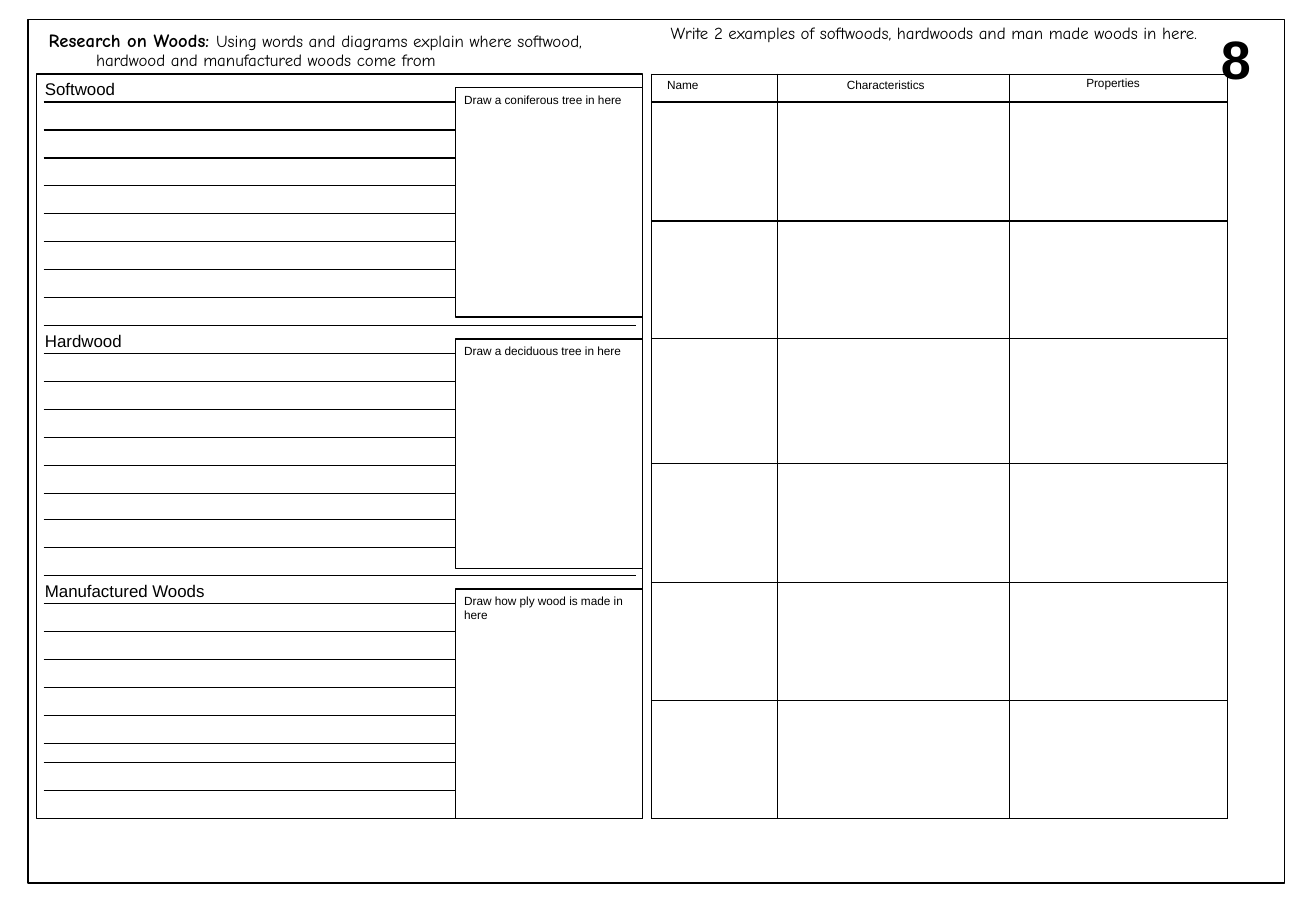
from dataclasses import dataclass
from typing import NamedTuple

from lxml.etree import SubElement
from pptx import Presentation
from pptx.dml.color import RGBColor
from pptx.enum.shapes import MSO_CONNECTOR, MSO_SHAPE
from pptx.enum.text import MSO_ANCHOR, MSO_AUTO_SIZE, PP_ALIGN
from pptx.oxml.ns import qn
from pptx.util import Emu, Pt


@dataclass(frozen=True)
class Theme:
    """Colours, fonts and type sizes of the worksheet."""
    ink: RGBColor = RGBColor(0, 0, 0)
    paper: RGBColor = RGBColor(255, 255, 255)
    plain: str = "Arial"
    hand: str = "Comic Neue"
    small: int = 7
    body: int = 10
    lead: int = 11
    badge: int = 32
    line: float = 0.75


class Box(NamedTuple):
    """A place on the slide in px."""
    x: int
    y: int
    w: int
    h: int


THEME = Theme()
PITCH = 23
WOODS = [
    ("Softwood", "Draw a coniferous tree in here", 207),
    ("Hardwood", "Draw a deciduous tree in here", 206),
    ("Manufactured Woods", "Draw how ply wood is made in here", 200),
]
HEADS = [("Name", 104, 13, 4), ("Characteristics", 191, 57, 4), ("Properties", 179, 63, 2)]
ROWS = [PITCH, 98, 97, 103, 98, 97, 97]


def px(count):
    """Turn px into EMU, at 100 px to the inch."""
    return Emu(count * 9144)


def place(box):
    """Turn a box into EMU lengths."""
    return [px(side) for side in box]


def write(frame, *parts, font=THEME.plain, size=THEME.body, bold=False, pad=(7, 4), hang=0, space=None):
    """Fill a text frame with parts, each a text or a (text, size, bold) triple."""
    frame.word_wrap = True
    frame.auto_size = MSO_AUTO_SIZE.NONE
    frame.vertical_anchor = MSO_ANCHOR.TOP
    frame.margin_left = frame.margin_right = px(pad[0])
    frame.margin_top = frame.margin_bottom = px(pad[1])
    para = frame.paragraphs[0]
    para.alignment = PP_ALIGN.LEFT
    para.line_spacing = space
    if hang:
        props = para._p.get_or_add_pPr()
        props.set("marL", str(px(hang)))
        props.set("indent", str(-px(hang)))
    for part in parts:
        text, points, heavy = (part, size, bold) if isinstance(part, str) else part
        run = para.add_run()
        run.text = text
        run.font.name = font
        run.font.size = Pt(points)
        run.font.bold = heavy
        run.font.color.rgb = THEME.ink


def label(slide, box, *parts, **style):
    """Add a text box."""
    write(slide.shapes.add_textbox(*place(box)).text_frame, *parts, **style)


def frame(slide, box, fill=None):
    """Add an outlined rectangle."""
    shape = slide.shapes.add_shape(MSO_SHAPE.RECTANGLE, *place(box))
    shape.shadow.inherit = False
    shape.line.color.rgb = THEME.ink
    shape.line.width = Pt(THEME.line)
    if fill is None:
        shape.fill.background()
    else:
        shape.fill.solid()
        shape.fill.fore_color.rgb = fill
    return shape


def rule(slide, x, y, width):
    """Add a level writing line."""
    line = slide.shapes.add_connector(MSO_CONNECTOR.STRAIGHT, px(x), px(y), px(x + width), px(y))
    line.line.color.rgb = THEME.ink
    line.line.width = Pt(THEME.line)
    SubElement(line._element.spPr, qn("a:effectLst"))


def header(slide, box):
    """Place the title, the table prompt and the page number."""
    title = slide.shapes.title
    title.left, title.top, title.width, title.height = place(Box(box.x + 7, box.y + 5, 493, 40))
    style = dict(font=THEME.hand, pad=(10, 5), hang=39, space=0.9)
    write(title.text_frame, ("Research on Woods: ", THEME.lead, True),
          "Using words and diagrams explain where softwood, "
          "hardwood and manufactured woods come from", **style)
    label(slide, Box(box.x + 519, box.y, 469, 40),
          "Write 2 examples of softwoods, hardwoods and man made woods in here.", **style)
    label(slide, Box(box.x + 972, box.y, 80, 64), "8", size=THEME.badge, bold=True, pad=(10, 5))


def section(slide, box, name, task):
    """Place one wood with its writing lines and drawing space."""
    upper = [box.y + PITCH * n for n in range(1, 7)]
    lower = [box.y + box.h - PITCH * n for n in (2, 1, 0)]
    for y in upper + lower:
        rule(slide, box.x + 6, y, 487)
    label(slide, Box(box.x, box.y, 216, 26), name)
    sketch = frame(slide, Box(box.x + 345, box.y + 11, 154, 189), THEME.paper)
    write(sketch.text_frame, task, size=THEME.small)


def notes(slide, box):
    """Stack the wood sections in an outlined panel."""
    frame(slide, box)
    top = box.y
    for name, task, height in WOODS:
        section(slide, Box(box.x, top, box.w, height), name, task)
        top += height


def border(cell):
    """Outline a table cell and leave it clear."""
    cell.fill.background()
    props = cell._tc.get_or_add_tcPr()
    for spot, side in enumerate(("a:lnL", "a:lnR", "a:lnT", "a:lnB")):
        edge = SubElement(props, qn(side), w=str(Pt(THEME.line)))
        fill = SubElement(edge, qn("a:solidFill"))
        SubElement(fill, qn("a:srgbClr"), val=str(THEME.ink))
        props.insert(spot, edge)


def chart(slide, box):
    """Place the table of examples."""
    table = slide.shapes.add_table(len(ROWS), len(HEADS), *place(box)).table
    table.first_row = table.horz_banding = False
    for row, height in zip(table.rows, ROWS):
        row.height = px(height)
    for spot, (name, width, inset, drop) in enumerate(HEADS):
        table.columns[spot].width = px(width)
        cell = table.cell(0, spot)
        write(cell.text_frame, name, size=THEME.small)
        cell.margin_left, cell.margin_right = px(inset), px(7)
        cell.margin_top, cell.margin_bottom = px(drop), px(2)
        cell.vertical_anchor = MSO_ANCHOR.TOP
    for cell in table.iter_cells():
        border(cell)


def main():
    """Build the worksheet slide."""
    deck = Presentation()
    deck.slide_width, deck.slide_height = px(1083), px(750)
    slide = deck.slides.add_slide(deck.slide_layouts[5])
    page = Box(23, 16, 1034, 711)
    frame(slide, page)
    header(slide, page)
    notes(slide, Box(30, 61, 499, 613))
    chart(slide, Box(536, 61, 474, 613))
    deck.save("out.pptx")


if __name__ == "__main__":
    main()
